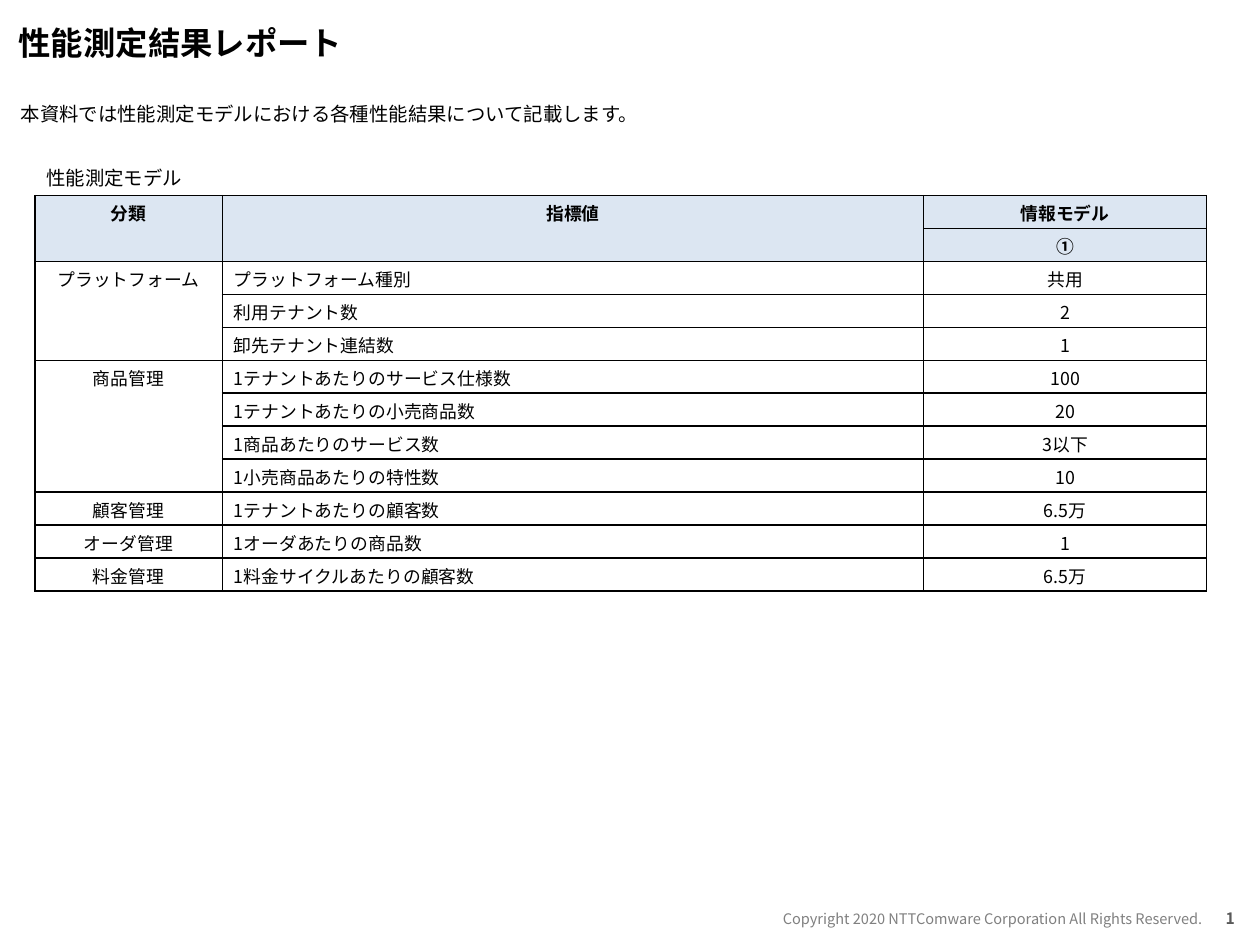
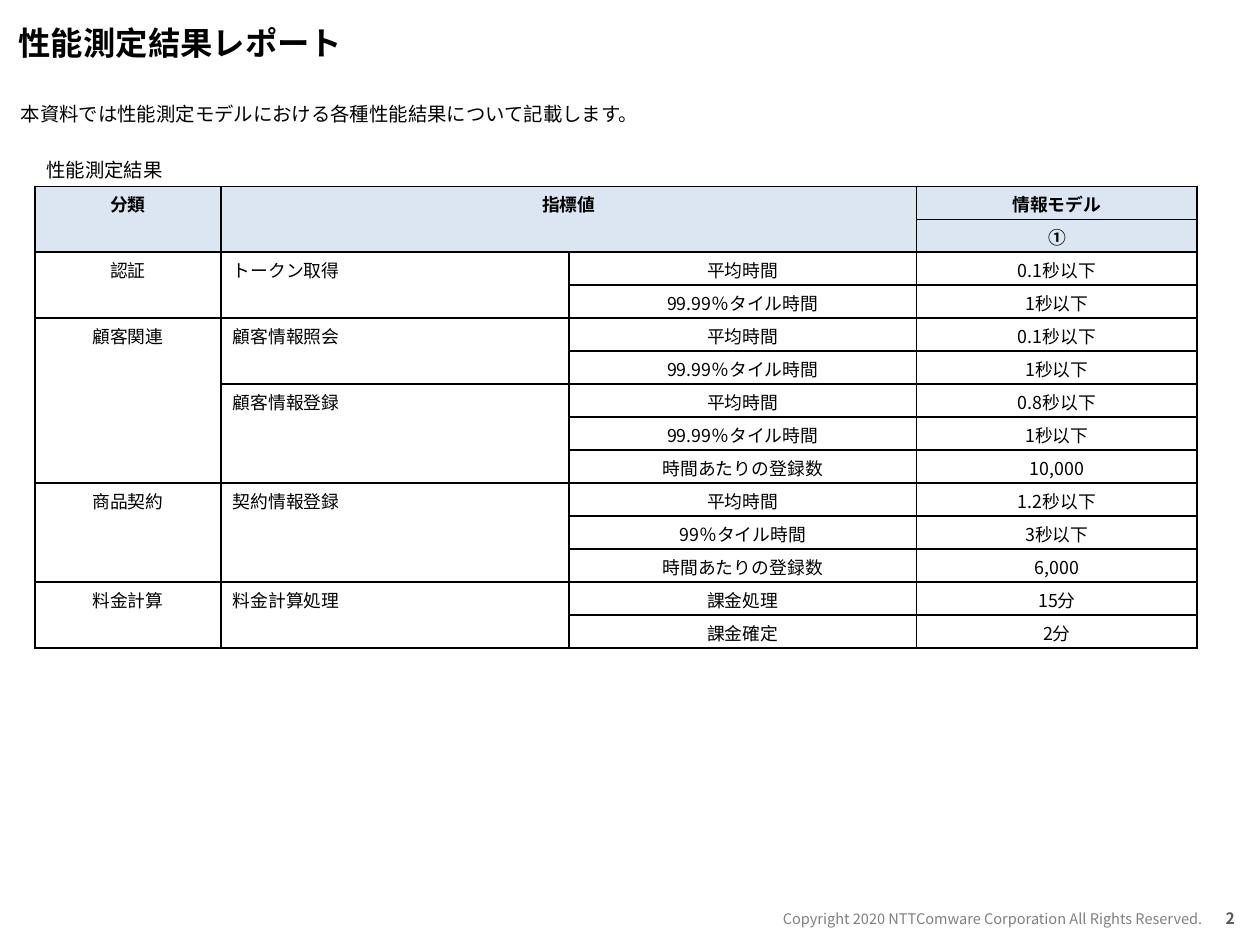
from dataclasses import dataclass
from typing import Optional

from lxml.etree import SubElement
from pptx import Presentation
from pptx.dml.color import RGBColor
from pptx.enum.text import MSO_ANCHOR, MSO_AUTO_SIZE, PP_ALIGN
from pptx.oxml.ns import qn
from pptx.util import Inches, Pt

FONT = "Noto Sans CJK JP"
BLACK, WHITE, HEADER_BLUE = "000000", "FFFFFF", "DCE6F2"
PAGE_GRAY, COPYRIGHT_GRAY = "595959", "808080"
LEFT, CENTER, RIGHT = PP_ALIGN.LEFT, PP_ALIGN.CENTER, PP_ALIGN.RIGHT

TITLE = "性能測定結果レポート"
INTRO = "本資料では性能測定モデルにおける各種性能結果について記載します。"
COPYRIGHT = "Copyright 2020 NTTComware Corporation All Rights Reserved."
HEADER_ROWS = 2
TABLE_LEFT = 0.3


@dataclass
class Report:
    """One slide's table; None continues the cell above, or to the left in the first row."""

    caption: str
    caption_top: float
    top: float
    height: float
    widths: list[float]
    rows: list[list[Optional[str]]]


REPORTS = [
    Report(
        "性能測定モデル", 1.38, 1.68, 3.4, [1.61, 6.03, 2.43],
        [
            ["分類", "指標値", "情報モデル"],
            [None, None, "①"],
            ["プラットフォーム", "プラットフォーム種別", "共用"],
            [None, "利用テナント数", "2"],
            [None, "卸先テナント連結数", "1"],
            ["商品管理", "1テナントあたりのサービス仕様数", "100"],
            [None, "1テナントあたりの小売商品数", "20"],
            [None, "1商品あたりのサービス数", "3以下"],
            [None, "1小売商品あたりの特性数", "10"],
            ["顧客管理", "1テナントあたりの顧客数", "6.5万"],
            ["オーダ管理", "1オーダあたりの商品数", "1"],
            ["料金管理", "1料金サイクルあたりの顧客数", "6.5万"],
        ],
    ),
    Report(
        "性能測定結果", 1.31, 1.6, 3.97, [1.6, 2.99, 2.99, 2.41],
        [
            ["分類", "指標値", None, "情報モデル"],
            [None, None, None, "①"],
            ["認証", "トークン取得", "平均時間", "0.1秒以下"],
            [None, None, "99.99％タイル時間", "1秒以下"],
            ["顧客関連", "顧客情報照会", "平均時間", "0.1秒以下"],
            [None, None, "99.99％タイル時間", "1秒以下"],
            [None, "顧客情報登録", "平均時間", "0.8秒以下"],
            [None, None, "99.99％タイル時間", "1秒以下"],
            [None, None, "時間あたりの登録数", "10,000"],
            ["商品契約", "契約情報登録", "平均時間", "1.2秒以下"],
            [None, None, "99％タイル時間", "3秒以下"],
            [None, None, "時間あたりの登録数", "6,000"],
            ["料金計算", "料金計算処理", "課金処理", "15分"],
            [None, None, "課金確定", "2分"],
        ],
    ),
]


def color(hex_code: str) -> RGBColor:
    """Turn a hex string into a colour."""
    return RGBColor.from_string(hex_code)


def write(frame, text: str, *, size: float = 12, ink: str = BLACK,
          bold: bool = False, align: PP_ALIGN = LEFT):
    """Write one formatted line into a text frame and return its run."""
    paragraph = frame.paragraphs[0]
    paragraph.alignment = align
    run = paragraph.add_run()
    run.text = text
    run.font.name = FONT
    run.font.size = Pt(size)
    run.font.bold = bold
    run.font.color.rgb = color(ink)
    SubElement(run.font._element, qn("a:ea"), typeface=FONT)
    return run


def add_line(slide, text: str, left: float, top: float, width: float,
             height: float, *, inset: Optional[float] = None, **style):
    """Add a text box holding one line and return its run."""
    frame = slide.shapes.add_textbox(
        Inches(left), Inches(top), Inches(width), Inches(height)).text_frame
    frame.word_wrap = True
    if inset is not None:
        frame.margin_left = frame.margin_right = Inches(inset)
        frame.margin_top = frame.margin_bottom = Inches(inset)
    return write(frame, text, **style)


def add_frame(slide, page: int) -> None:
    """Fill in the title, introduction and footer that every slide shares."""
    title = slide.shapes.title
    title.left, title.top = Inches(0.06), Inches(0.06)
    title.width, title.height = Inches(10.51), Inches(0.62)
    title.text_frame.auto_size = MSO_AUTO_SIZE.NONE
    title.text_frame.vertical_anchor = MSO_ANCHOR.MIDDLE
    write(title.text_frame, TITLE, size=20, bold=True)
    add_line(slide, INTRO, 0.08, 0.83, 10.37, 0.32)
    add_line(slide, COPYRIGHT, 5.86, 7.78, 4.51, 0.22, inset=0.04,
             size=9, ink=COPYRIGHT_GRAY, align=RIGHT)
    number = add_line(slide, str(page), 10.19, 7.76, 0.77, 0.26,
                      size=9.7, ink=PAGE_GRAY, bold=True, align=CENTER)
    field = number._r
    field.tag = qn("a:fld")
    field.set("id", "{B6F15528-21DE-4FAA-801E-634DDDAF4B2B}")
    field.set("type", "slidenum")


def style_cell(cell, fill: str) -> None:
    """Give a cell its borders, fill and margins."""
    properties = cell._tc.get_or_add_tcPr()
    for side in ("lnL", "lnR", "lnT", "lnB"):
        border = SubElement(properties, qn(f"a:{side}"), w=str(Pt(1)))
        paint = SubElement(border, qn("a:solidFill"))
        SubElement(paint, qn("a:srgbClr"), val=BLACK)
    cell.fill.solid()
    cell.fill.fore_color.rgb = color(fill)
    cell.margin_top, cell.margin_bottom = Inches(0.04), Inches(0)


def count_blanks(values: list[Optional[str]]) -> int:
    """Count the leading None values."""
    return next((i for i, value in enumerate(values) if value is not None), len(values))


def add_report(slide, report: Report) -> None:
    """Add the caption and the table of a report."""
    add_line(slide, report.caption, TABLE_LEFT, report.caption_top, 2, 0.3)
    rows, widths = report.rows, report.widths
    table = slide.shapes.add_table(
        len(rows), len(widths), Inches(TABLE_LEFT), Inches(report.top),
        Inches(sum(widths)), Inches(report.height)).table
    table.first_row = table.horz_banding = False
    for column, width in zip(table.columns, widths):
        column.width = Inches(width)
    for row in table.rows:
        row.height = Inches(report.height / len(rows))
    for r, values in enumerate(rows):
        is_header = r < HEADER_ROWS
        for c, text in enumerate(values):
            cell = table.cell(r, c)
            style_cell(cell, HEADER_BLUE if is_header else WHITE)
            if text is None:
                continue
            write(cell.text_frame, text, size=11, bold=is_header,
                  align=LEFT if c == 1 and not is_header else CENTER)
            down = count_blanks([below[c] for below in rows[r + 1:]])
            across = count_blanks(values[c + 1:]) if r == 0 else 0
            if down or across:
                cell.merge(table.cell(r + down, c + across))


def main() -> None:
    """Build and save the presentation."""
    deck = Presentation()
    deck.slide_width, deck.slide_height = Inches(10.83), Inches(8.12)
    for page, report in enumerate(REPORTS, start=1):
        slide = deck.slides.add_slide(deck.slide_layouts[5])
        add_frame(slide, page)
        add_report(slide, report)
    deck.save("out.pptx")


if __name__ == "__main__":
    main()
